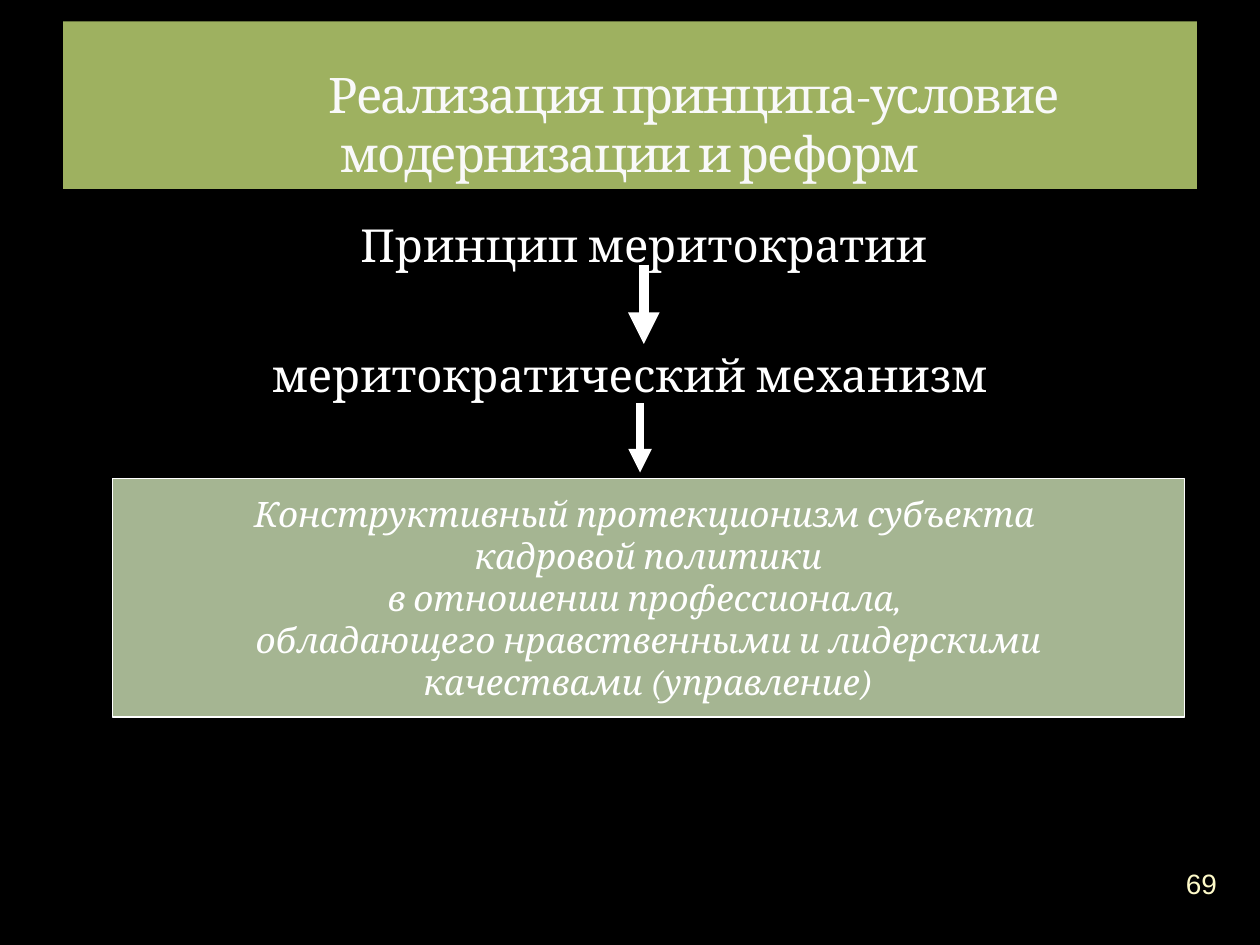
from lxml.etree import SubElement
from pptx import Presentation
from pptx.dml.color import RGBColor
from pptx.enum.shapes import MSO_CONNECTOR, MSO_SHAPE
from pptx.enum.text import MSO_ANCHOR, MSO_AUTO_SIZE, PP_ALIGN
from pptx.oxml.ns import qn
from pptx.util import Inches, Pt

WIDTH, HEIGHT = 10, 7.5
COLORS = {
    "background": "000000",
    "title_fill": "9EB160",
    "title_text": "F9F9F9",
    "box_fill": "A5B592",
    "white": "FFFFFF",
    "number": "FEFAC9",
}


def color(name):
    return RGBColor.from_string(COLORS[name])


class SlideBuilder:
    """Holds the style and the current slide; places are shares of its size."""

    font = "Cambria"

    def __init__(self, deck):
        self.deck = deck
        self.slide = deck.slides.add_slide(deck.slide_layouts[1])
        fill = self.slide.background.fill
        fill.solid()
        fill.fore_color.rgb = color("background")

    def across(self, share):
        return int(self.deck.slide_width * share)

    def down(self, share):
        return int(self.deck.slide_height * share)

    def area(self, left, top, width, height):
        return self.across(left), self.down(top), self.across(width), self.down(height)

    def place(self, shape, area):
        shape.left, shape.top, shape.width, shape.height = self.area(*area)

    def paint(self, shape, fill):
        shape.fill.solid()
        shape.fill.fore_color.rgb = color(fill)

    def set_text(self, shape, lines, size, text_color="white", font=None,
                 italic=False, anchor=MSO_ANCHOR.TOP, wrap=True):
        frame = shape.text_frame
        frame.auto_size = MSO_AUTO_SIZE.NONE
        frame.word_wrap = wrap
        frame.vertical_anchor = anchor
        for index, line in enumerate(lines):
            para = frame.add_paragraph() if index else frame.paragraphs[0]
            para.alignment = PP_ALIGN.CENTER
            span = para.add_run()
            span.text = line
            span.font.name = font or self.font
            span.font.size = Pt(size)
            span.font.italic = italic
            span.font.color.rgb = color(text_color)
        return frame.paragraphs

    def indent(self, para, margin, first_line):
        properties = para._p.get_or_add_pPr()
        properties.set("marL", str(Inches(margin)))
        properties.set("indent", str(Inches(first_line)))

    def title(self, text, area):
        title = self.slide.shapes.title
        self.place(title, area)
        self.paint(title, "title_fill")
        para = self.set_text(title, [text], 28, "title_text", anchor=MSO_ANCHOR.BOTTOM)[0]
        self.indent(para, 0, 1)
        para.runs[0]._r.get_or_add_rPr().set("spc", "-100")

    def body(self, lines, area, gaps, indents):
        body = self.slide.placeholders[1]
        self.place(body, area)
        paras = self.set_text(body, lines, 26)
        for para, gap, (margin, first_line) in zip(paras, gaps, indents):
            para.space_before = Pt(gap)
            self.indent(para, margin, first_line)
            SubElement(para._p.get_or_add_pPr(), qn("a:buNone"))

    def box(self, lines, area):
        box = self.slide.shapes.add_shape(MSO_SHAPE.RECTANGLE, *self.area(*area))
        box.shadow.inherit = False
        self.paint(box, "box_fill")
        box.line.color.rgb = color("white")
        box.line.width = Pt(0.75)
        self.set_text(box, lines, 20, italic=True, anchor=MSO_ANCHOR.MIDDLE, wrap=False)

    def down_arrow(self, x, top, bottom, weight):
        x = self.across(x)
        arrow = self.slide.shapes.add_connector(
            MSO_CONNECTOR.STRAIGHT, x, self.down(top), x, self.down(bottom))
        arrow.line.color.rgb = color("white")
        arrow.line.width = Pt(weight)
        SubElement(arrow.line._get_or_add_ln(), qn("a:tailEnd"), type="triangle")
        SubElement(arrow._element.spPr, qn("a:effectLst"))

    def page_number(self, text, area):
        number = self.slide.shapes.add_textbox(*self.area(*area))
        frame = number.text_frame
        frame.margin_left = frame.margin_right = 0
        frame.margin_top = frame.margin_bottom = 0
        self.set_text(number, [text], 16, "number", "Arial", anchor=MSO_ANCHOR.MIDDLE)


def main():
    deck = Presentation()
    deck.slide_width, deck.slide_height = Inches(WIDTH), Inches(HEIGHT)
    page = SlideBuilder(deck)

    # Heading band
    page.title("Реализация принципа-условие модернизации и реформ",
               (0.05, 0.17 / HEIGHT, 0.9, 1.33 / HEIGHT))

    # Principle and the mechanism that follows from it
    page.body(["Принцип меритократии ", "меритократический механизм"],
              (0.05, 1.67 / HEIGHT, 0.9, 5 / HEIGHT),
              gaps=(6, 43), indents=((0.3, 0), (0.3, -0.3)))
    page.down_arrow(0.511, 2.1 / HEIGHT, 2.73 / HEIGHT, 6)
    page.down_arrow(0.508, 3.2 / HEIGHT, 3.75 / HEIGHT, 4.5)

    # Outcome
    page.box(["Конструктивный протекционизм субъекта ",
              "кадровой политики",
              "в отношении профессионала, ",
              "обладающего нравственными и лидерскими",
              "качествами (управление)"],
             (0.089, 3.8 / HEIGHT, 0.851, 1.89 / HEIGHT))

    page.page_number("69", (0.92, 6.76 / HEIGHT, 0.067, 0.5 / HEIGHT))
    deck.save("out.pptx")


if __name__ == "__main__":
    main()
